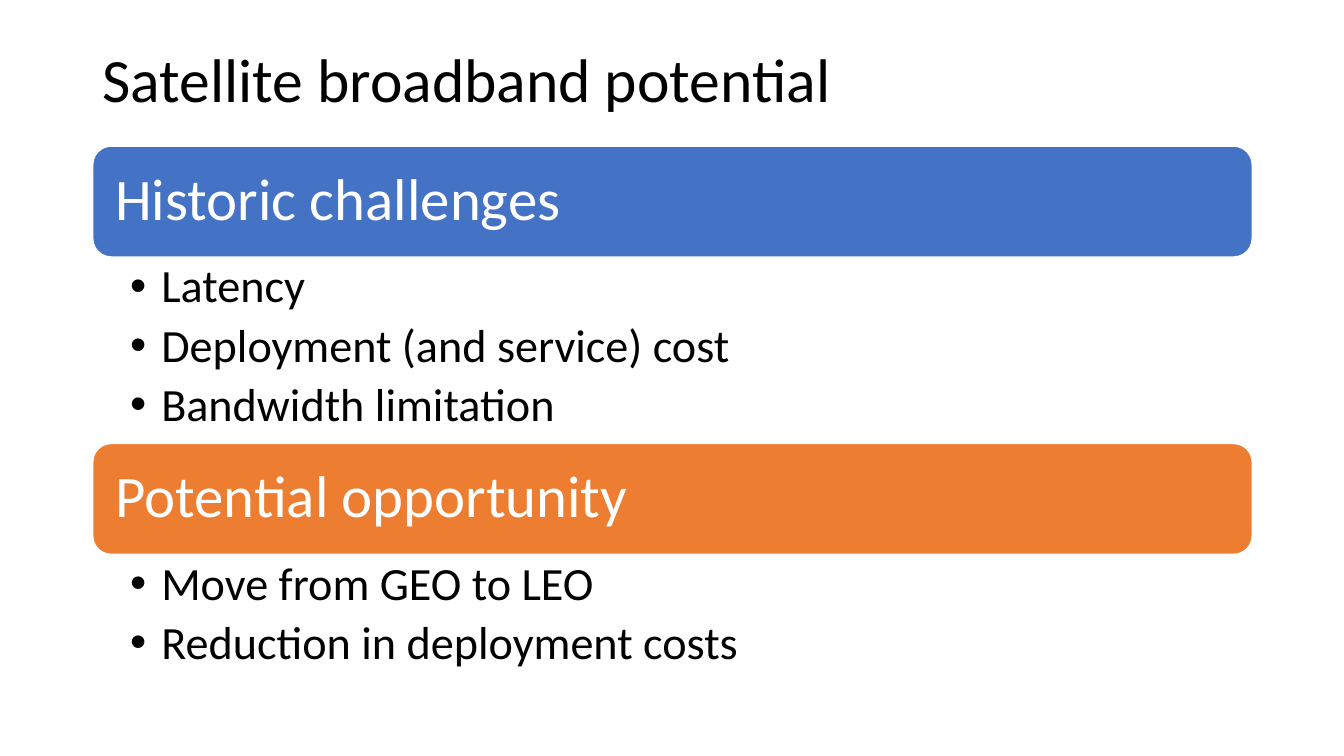
from dataclasses import dataclass

from lxml.etree import SubElement
from pptx import Presentation
from pptx.dml.color import RGBColor
from pptx.enum.shapes import MSO_SHAPE
from pptx.enum.text import MSO_ANCHOR, PP_ALIGN
from pptx.oxml.ns import qn
from pptx.util import Inches, Pt


@dataclass(frozen=True)
class Theme:
    font: str = "Calibri"
    title_size: int = 44
    header_size: int = 42
    bullet_size: int = 33
    dark: str = "000000"
    light: str = "FFFFFF"
    blue: str = "4472C4"
    orange: str = "ED7D31"


THEME = Theme()
LEFT, WIDTH = 0.92, 11.5
HEADER_HEIGHT = 1.1
SECTIONS = [
    ("Historic challenges", THEME.blue, 1.85,
     ["Latency", "Deployment (and service) cost", "Bandwidth limitation"]),
    ("Potential opportunity", THEME.orange, 1.24,
     ["Move from GEO to LEO", "Reduction in deployment costs"]),
]


def set_frame(shape, insets, anchor):
    frame = shape.text_frame
    frame.word_wrap = True
    frame.vertical_anchor = anchor
    frame.margin_left, frame.margin_top, frame.margin_right, frame.margin_bottom = map(Inches, insets)
    return frame


def format_paragraph(para, size, color, space_after=0):
    para.alignment = PP_ALIGN.LEFT
    para.line_spacing = 0.9
    para.space_after = Pt(space_after)
    for span in para.runs:
        span.font.name = THEME.font
        span.font.size = Pt(size)
        span.font.color.rgb = RGBColor.from_string(color)


def add_bullet(para):
    properties = para._p.get_or_add_pPr()
    properties.set("marL", str(Inches(0.31)))
    properties.set("indent", str(Inches(-0.31)))
    SubElement(properties, qn("a:buFont")).set("typeface", "Arial")
    SubElement(properties, qn("a:buChar")).set("char", "•")


def add_title(page, box, text):
    title = page.shapes.add_textbox(*map(Inches, box))
    frame = set_frame(title, (0.1, 0.05, 0.1, 0.05), MSO_ANCHOR.MIDDLE)
    frame.text = text
    format_paragraph(frame.paragraphs[0], THEME.title_size, THEME.dark)


def add_header(page, box, text, color):
    header = page.shapes.add_shape(MSO_SHAPE.ROUNDED_RECTANGLE, *map(Inches, box))
    header.shadow.inherit = False
    header.fill.solid()
    header.fill.fore_color.rgb = RGBColor.from_string(color)
    header.line.color.rgb = RGBColor.from_string(THEME.light)
    header.line.width = Pt(1)
    frame = set_frame(header, (0.17, 0.17, 0.17, 0.17), MSO_ANCHOR.MIDDLE)
    frame.text = text
    format_paragraph(frame.paragraphs[0], THEME.header_size, THEME.light)


def add_bullets(page, box, items):
    bullets = page.shapes.add_textbox(*map(Inches, box))
    frame = set_frame(bullets, (0.37, 0.06, 0.33, 0.06), MSO_ANCHOR.TOP)
    frame.text = "\n".join(items)
    for para in frame.paragraphs:
        format_paragraph(para, THEME.bullet_size, THEME.dark, 6.6)
        add_bullet(para)


def add_section(page, box, header, color, items):
    left, top, width, height = box
    add_header(page, (left, top, width, HEADER_HEIGHT), header, color)
    add_bullets(page, (left, top + HEADER_HEIGHT, width, height - HEADER_HEIGHT), items)


def main():
    deck = Presentation()
    deck.slide_width, deck.slide_height = Inches(13.33), Inches(7.5)
    page = deck.slides.add_slide(deck.slide_layouts[6])
    add_title(page, (LEFT, 0.4, WIDTH, 0.83), "Satellite broadband potential")
    top = 1.45
    for header, color, bullets_height, items in SECTIONS:
        height = HEADER_HEIGHT + bullets_height
        add_section(page, (LEFT, top, WIDTH, height), header, color, items)
        top += height
    deck.save("out.pptx")


if __name__ == "__main__":
    main()
